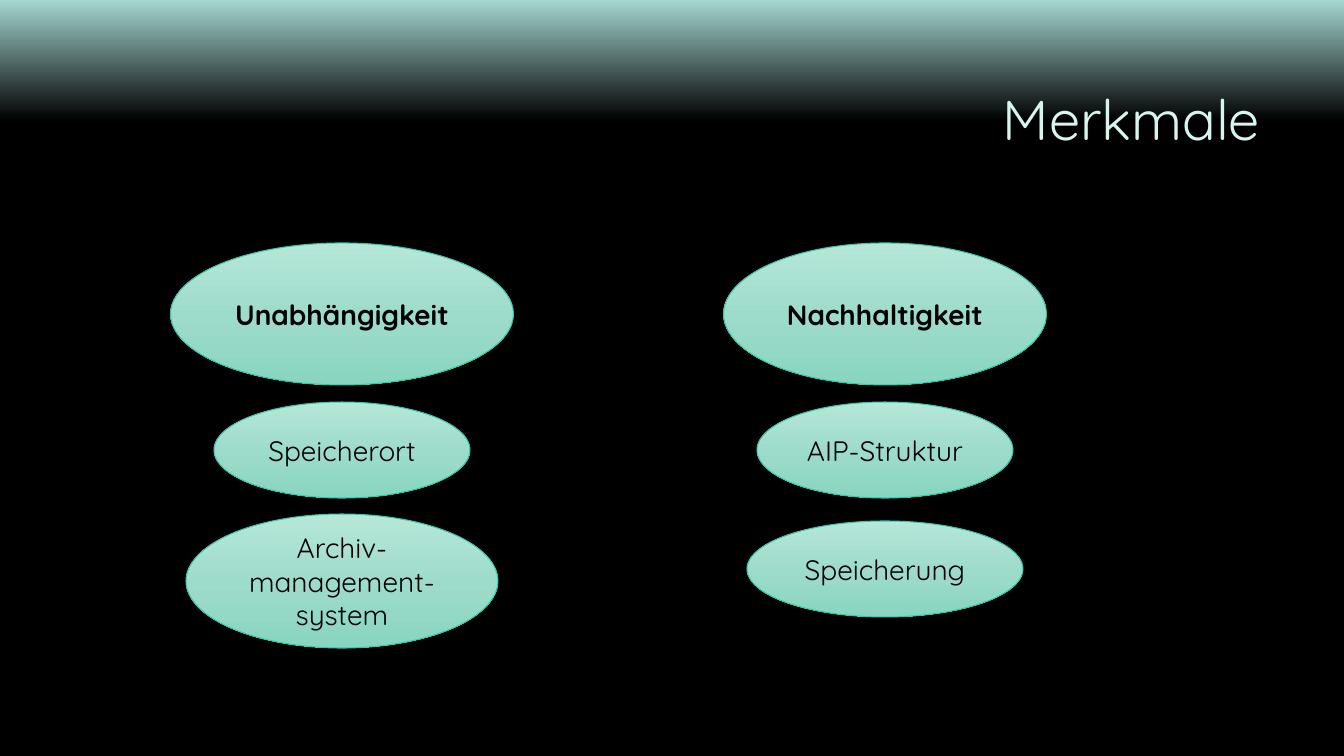
from lxml import etree
from pptx import Presentation
from pptx import util as u
from pptx.dml.color import RGBColor
from pptx.enum import shapes, text
from pptx.oxml.ns import qn

TITLE = "Merkmale"
TITLE_AREA = (320, 51, 950, 142)
# Column centre, then label, top, width, height, bold
COLUMNS = [
    (342, [
        ("Unabhängigkeit", 243, 343, 142, True),
        ("Speicherort", 402, 256, 96, False),
        ("Archiv-management-system", 514, 312, 134, False),
    ]),
    (885, [
        ("Nachhaltigkeit", 243, 323, 142, True),
        ("AIP-Struktur", 402, 256, 96, False),
        ("Speicherung", 521, 276, 96, False),
    ]),
]
COLORS = {"title": "D5F5EE", "label": "000000", "outline": "32C7A9"}
SKY = [(0, "A5D7D2"), (16, "000000"), (100, "000000")]
MINT = [(0, "B6E7D9"), (52, "9DDBCA"), (100, "89D5C0")]
FONT = "Quicksand"
PX_PER_INCH = 100.8


def px(*lengths):
    return [u.Inches(length / PX_PER_INCH) for length in lengths]


def fill_gradient(fill, element, stops):
    """Fill top to bottom with any number of (percent, colour) stops."""
    fill.gradient()
    fill.gradient_angle = 270
    stop_list = next(element.iter(qn("a:gsLst")))
    for stop in list(stop_list):
        stop_list.remove(stop)
    for percent, color in stops:
        stop = etree.SubElement(stop_list, qn("a:gs"), pos=str(percent * 1000))
        etree.SubElement(stop, qn("a:srgbClr"), val=color)


def write(shape, words, color, align, **font):
    frame = shape.text_frame
    frame.word_wrap = True
    frame.vertical_anchor = text.MSO_ANCHOR.MIDDLE
    para = frame.paragraphs[0]
    para.alignment = align
    span = para.add_run()
    span.text = words
    span.font.color.rgb = RGBColor.from_string(COLORS[color])
    for name, value in {"name": FONT, **font}.items():
        setattr(span.font, name, value)
    return para


def add_ellipse(slide, center, label, top, width, height, bold):
    ellipse = slide.shapes.add_shape(
        shapes.MSO_SHAPE.OVAL, *px(center - width / 2, top, width, height))
    ellipse.shadow.inherit = False
    fill_gradient(ellipse.fill, ellipse.element, MINT)
    ellipse.line.color.rgb = RGBColor.from_string(COLORS["outline"])
    ellipse.line.width = u.Pt(0.75)
    write(ellipse, label, "label", text.PP_ALIGN.CENTER, size=u.Pt(20), bold=bold)


def main():
    deck = Presentation()
    deck.slide_width, deck.slide_height = px(1344, 756)
    slide = deck.slides.add_slide(deck.slide_layouts.get_by_name("Title Only"))
    fill_gradient(slide.background.fill, slide.element, SKY)

    title = slide.shapes.title
    title.left, title.top, title.width, title.height = px(*TITLE_AREA)
    para = write(title, TITLE, "title", text.PP_ALIGN.RIGHT, size=u.Pt(40))
    para.line_spacing = 0.9

    for center, ellipses in COLUMNS:
        for ellipse in ellipses:
            add_ellipse(slide, center, *ellipse)
    deck.save("out.pptx")


if __name__ == "__main__":
    main()
